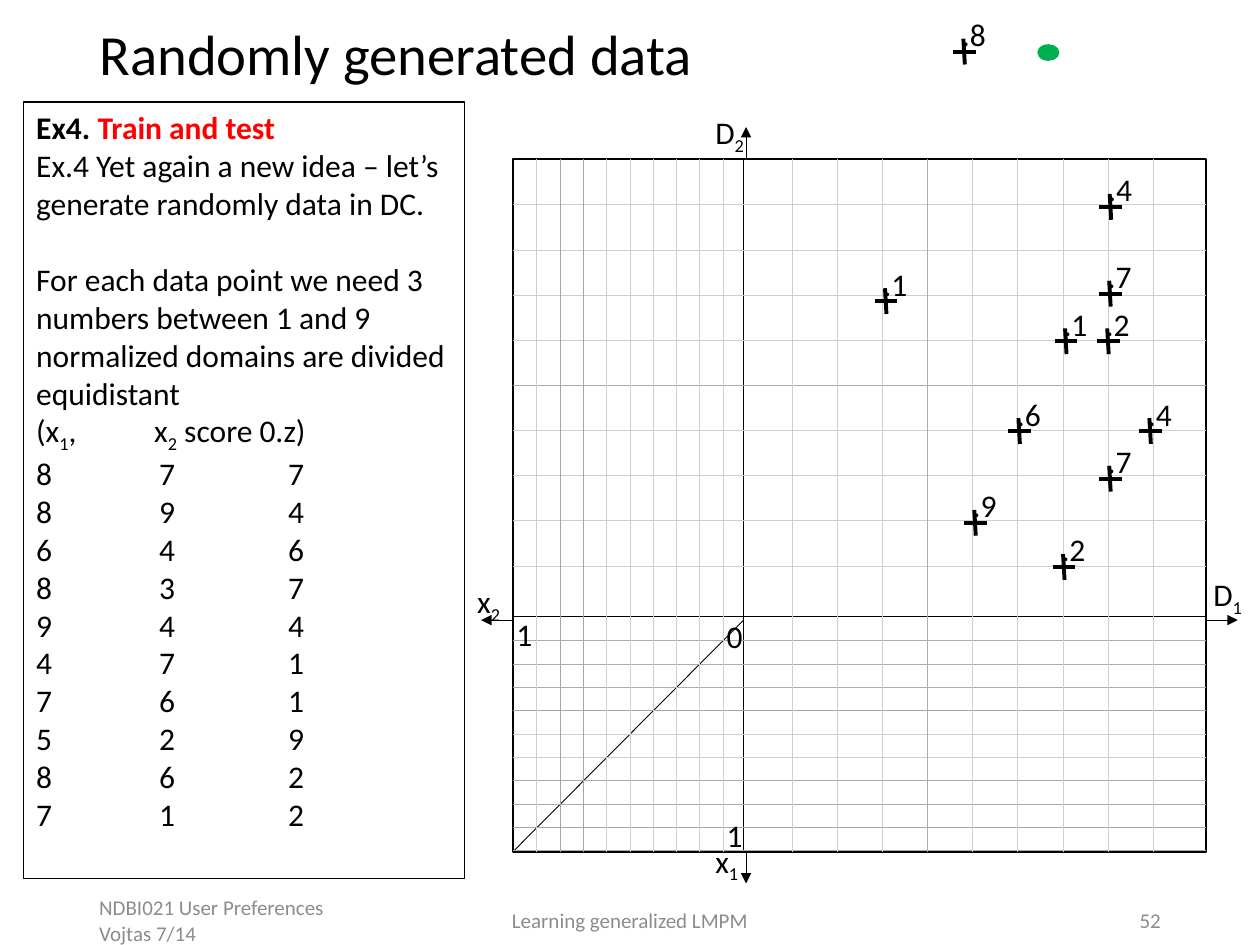
"""Build a slide of randomly generated train and test points on a preference grid."""
from lxml.etree import SubElement
from pptx import Presentation
from pptx.dml.color import RGBColor
from pptx.enum.shapes import MSO_CONNECTOR, MSO_SHAPE
from pptx.enum.text import MSO_ANCHOR, MSO_AUTO_SIZE, PP_ALIGN
from pptx.oxml.ns import qn
from pptx.util import Cm, Pt

COLORS = {"black": "000000", "red": "FF0000", "green": "00B050", "footer": "8C8C8C",
          "light": "D0CECE", "mid": "AFABAB", "dark": "A6A6A6", "blue": "4472C4"}
SHADES = {"l": "light", "m": "mid", "d": "dark"}
LEFT, TOP, SIDE = 10.34, 3.2, 13.97
RIGHT, BOTTOM = LEFT + SIDE, TOP + SIDE
AXIS_X, AXIS_Y = 15.04, 12.5
COLUMNS = [(10.82, 0.47, "lddllllll"), (15.97, 0.91, "lllmlllll")]
ROWS = [(4.13, 0.91, "llllmllll"), (12.92, 0.47, "mmmdllmmdm")]
POINTS = [(19.44, 1.04, ".8"), (22.38, 5.92, ".7"), (22.39, 4.17, ".4"), (20.55, 8.69, ".6"),
          (22.38, 9.65, ".7"), (23.19, 8.69, ".4"), (17.86, 6.07, ".1"), (21.49, 6.88, ".1"),
          (19.66, 10.54, ".9"), (22.34, 6.88, ".2"), (21.45, 11.43, ".2")]
LABELS = [(10.16, 12.27, 0.84, "1", ""), (14.4, 12.32, 0.84, "0", ""),
          (14.4, 16.33, 0.84, "1", ""), (14.17, 2.16, 1.12, "D", "2"),
          (24.21, 11.46, 1.12, "D", "1"), (14.17, 16.84, 1.02, "x", "1"),
          (9.37, 11.61, 1.02, "x", "2")]
DATA = ["877", "894", "646", "837", "944", "471", "761", "529", "862", "712"]


class Deck:
    """Hold the slide and its text and line style."""

    def __init__(self, prs):
        self.font = "Calibri"
        self.s = prs.slides.add_slide(prs.slide_layouts[5])

    def color(self, name):
        return RGBColor.from_string(COLORS[name])

    def run(self, p, text, size=18, color="black", bold=False, sub=False):
        r = p.add_run()
        r.text = text
        r.font.name, r.font.size, r.font.bold = self.font, Pt(size), bold
        r.font.color.rgb = self.color(color)
        if sub:
            r.font._element.set("baseline", "-25000")

    def title(self, text, x, y, w, h):
        sp = self.s.shapes.title
        sp.left, sp.top, sp.width, sp.height = Cm(x), Cm(y), Cm(w), Cm(h)
        tf = sp.text_frame
        tf.auto_size, tf.vertical_anchor = MSO_AUTO_SIZE.NONE, MSO_ANCHOR.MIDDLE
        p = tf.paragraphs[0]
        p.alignment, p.line_spacing = PP_ALIGN.LEFT, 0.9
        self.run(p, text, 32.4)

    def footer(self, text, x, w, align):
        tf = self.s.shapes.add_textbox(Cm(x), Cm(18.04), Cm(w), Cm(1.02)).text_frame
        tf.word_wrap, tf.vertical_anchor = True, MSO_ANCHOR.MIDDLE
        p = tf.paragraphs[0]
        p.alignment = align
        self.run(p, text, 12, "footer")

    def label(self, x, y, w, text, sub=""):
        tf = self.s.shapes.add_textbox(Cm(x), Cm(y), Cm(w), Cm(1.02)).text_frame
        tf.word_wrap, tf.auto_size = False, MSO_AUTO_SIZE.SHAPE_TO_FIT_TEXT
        self.run(tf.paragraphs[0], text)
        if sub:
            self.run(tf.paragraphs[0], sub, sub=True)

    def line(self, x1, y1, x2, y2, color="black", width=0.5, arrow=False):
        c = self.s.shapes.add_connector(MSO_CONNECTOR.STRAIGHT, Cm(x1), Cm(y1), Cm(x2), Cm(y2))
        c.line.width, c.line.color.rgb = Pt(width), self.color(color)
        if arrow:
            SubElement(c.line._get_or_add_ln(), qn("a:tailEnd"), type="triangle")
        SubElement(c._element.spPr, qn("a:effectLst"))

    def shape(self, kind, x, y, w, h, line="black", width=1.0, fill=None):
        sp = self.s.shapes.add_shape(kind, Cm(x), Cm(y), Cm(w), Cm(h))
        sp.shadow.inherit = False
        sp.line.color.rgb, sp.line.width = self.color(line), Pt(width)
        if fill:
            sp.fill.solid()
            sp.fill.fore_color.rgb = self.color(fill)
        else:
            sp.fill.background()
        return sp

    def point(self, x, y, score):
        self.line(x - 0.23, y, x + 0.23, y, width=2.25)
        self.line(x - 0.02, y - 0.26, x + 0.01, y + 0.26, width=2.25)
        self.label(x - 0.3, y - 0.86, 0.99, score)

    def paragraph(self, tf, runs, tabs=(), before=0):
        p = tf.paragraphs[0] if not tf.paragraphs[0].runs else tf.add_paragraph()
        p.alignment = PP_ALIGN.LEFT
        if tabs:
            tab_list = SubElement(p._p.get_or_add_pPr(), qn("a:tabLst"))
            for pos in tabs:
                SubElement(tab_list, qn("a:tab"), pos=str(Cm(pos)), algn="l")
        if before:
            p.space_before = Pt(before)
        for text, style in runs:
            self.run(p, text, **style)

    def explanation(self):
        tf = self.shape(MSO_SHAPE.RECTANGLE, 0.48, 2.06, 8.89, 15.65, width=0.75).text_frame
        tf.word_wrap, tf.vertical_anchor = True, MSO_ANCHOR.TOP
        sub = {"sub": True}
        self.paragraph(tf, [("Ex4. ", {"bold": True}),
                            ("Train and test", {"bold": True, "color": "red"})])
        self.paragraph(tf, [("Ex.4 Yet again a new idea – let’s generate randomly data in DC.", {})])
        self.paragraph(tf, [("For each data point we need 3 numbers between 1 and 9 "
                             "normalized domains are divided equidistant", {})], before=22)
        self.paragraph(tf, [("(x", {}), ("1", sub), (",\tx", {}), ("2", sub),
                            (" score 0.z)", {})], tabs=[2.38])
        for row in DATA:
            self.paragraph(tf, [("\t".join(row), {})], tabs=[2.48, 5.08])

    def grid(self):
        self.line(LEFT, AXIS_Y - 0.08, RIGHT, AXIS_Y - 0.08)
        self.line(AXIS_X - 0.05, TOP, AXIS_X - 0.05, BOTTOM)
        self.line(LEFT, TOP, LEFT, BOTTOM, "blue")
        self.shape(MSO_SHAPE.RECTANGLE, LEFT, TOP, SIDE, SIDE)
        self.line(AXIS_X - 0.05, AXIS_Y, LEFT, BOTTOM)
        for start, step, shades in ROWS:
            for i, shade in enumerate(shades):
                y = start + i * step
                self.line(LEFT, y, RIGHT, y, SHADES[shade])
        for start, step, shades in COLUMNS:
            for i, shade in enumerate(shades):
                x = start + i * step
                self.line(x, TOP, x, BOTTOM, SHADES[shade])

    def axes(self):
        for x, y, dx, dy in [(AXIS_X, TOP, 0, -1), (RIGHT, AXIS_Y, 1, 0),
                             (AXIS_X, BOTTOM, 0, 1), (LEFT, AXIS_Y, -1, 0)]:
            self.line(x, y, x + 0.64 * dx, y + 0.64 * dy, arrow=True)
        for label in LABELS:
            self.label(*label)


def main():
    prs = Presentation()
    prs.slide_width, prs.slide_height = Cm(25.4), Cm(19.05)
    deck = Deck(prs)
    deck.title("Randomly generated data", 1.75, 0.36, 21.9, 1.6)
    deck.footer("NDBI021 User Preferences Vojtas 7/14", 1.75, 5.72, PP_ALIGN.LEFT)
    deck.footer("Learning generalized LMPM", 8.41, 8.58, PP_ALIGN.CENTER)
    deck.footer("52", 17.93, 5.72, PP_ALIGN.RIGHT)
    deck.grid()
    deck.axes()
    deck.shape(MSO_SHAPE.OVAL, 20.93, 0.91, 0.41, 0.3, "green", fill="green")
    deck.explanation()
    for point in POINTS:
        deck.point(*point)
    prs.save("out.pptx")


if __name__ == "__main__":
    main()
